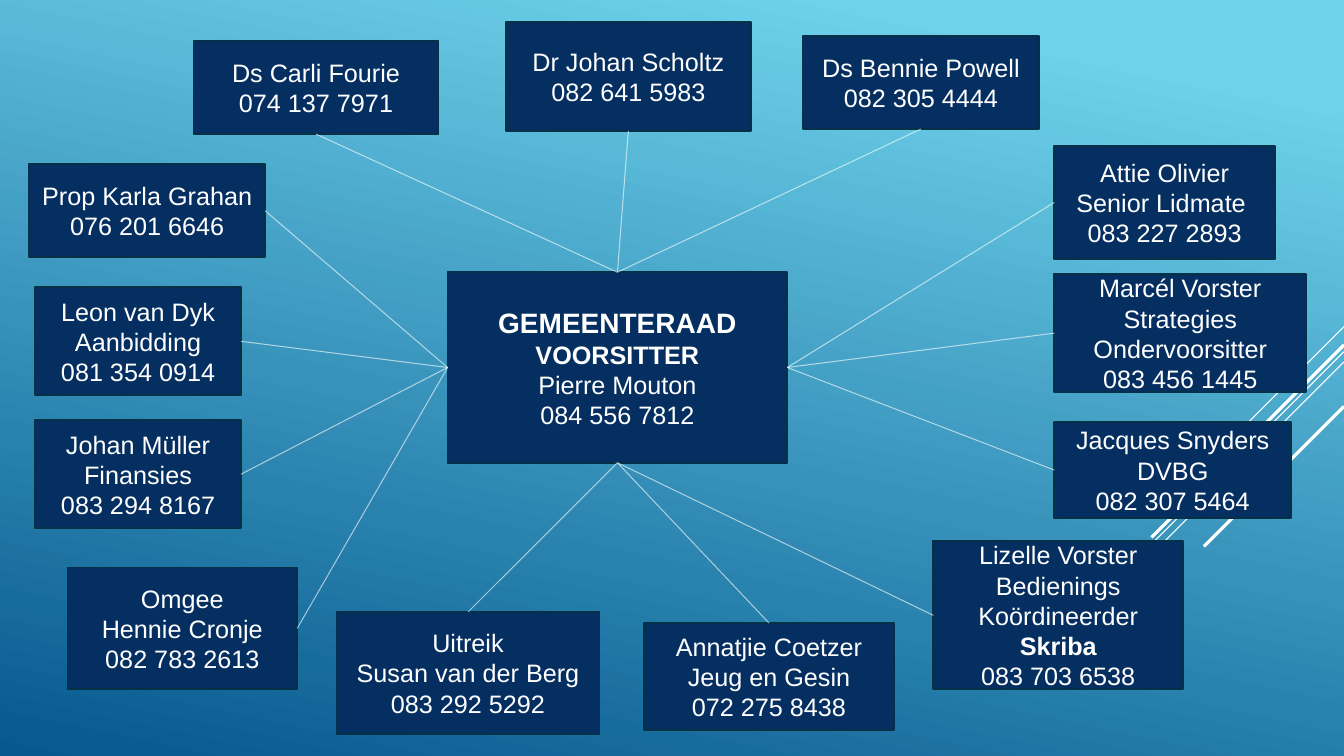
import pptx
import pptx.util
import pptx.dml.color
import pptx.enum.shapes
import pptx.enum.text
import pptx.oxml
import pptx.oxml.ns
import lxml.etree

Cm = pptx.util.Cm
Pt = pptx.util.Pt
RGB = pptx.dml.color.RGBColor.from_string
qn = pptx.oxml.ns.qn

COLOURS = {"sky": "6ED2EB", "sea": "06588E", "navy": "052F61",
           "edge": "043148", "white": "FFFFFF"}
TOP, LEFT, BOTTOM, RIGHT = range(4)
SLIDE_WIDTH = 33.87

deck = pptx.Presentation()
deck.slide_width = Cm(SLIDE_WIDTH)
deck.slide_height = Cm(19.05)
slide = deck.slides.add_slide(deck.slide_layouts[6])

backdrop = slide.background.fill
backdrop.gradient()
backdrop.gradient_angle = 258
for stop, position, colour in zip(backdrop.gradient_stops, (0.1, 1), ("sky", "sea")):
    stop.position = position
    stop.color.rgb = RGB(COLOURS[colour])


def add_line(x1, y1, x2, y2, weight):
    line = slide.shapes.add_connector(
        pptx.enum.shapes.MSO_CONNECTOR.STRAIGHT, Cm(x1), Cm(y1), Cm(x2), Cm(y2))
    line.line.color.rgb = RGB(COLOURS["white"])
    line.line.width = Pt(weight)
    lxml.etree.SubElement(line._element.spPr, qn("a:effectLst"))
    return line


def add_box(left, top, width, height, lines):
    box = slide.shapes.add_shape(
        pptx.enum.shapes.MSO_SHAPE.RECTANGLE, Cm(left), Cm(top), Cm(width), Cm(height))
    box.shadow.inherit = False
    box.fill.solid()
    box.fill.fore_color.rgb = RGB(COLOURS["navy"])
    box.line.color.rgb = RGB(COLOURS["edge"])
    box.line.width = Pt(1.25)
    frame = box.text_frame
    frame.word_wrap = True
    frame.vertical_anchor = pptx.enum.text.MSO_ANCHOR.MIDDLE
    frame.text = "\n".join(lines)
    for paragraph in frame.paragraphs:
        paragraph.alignment = pptx.enum.text.PP_ALIGN.CENTER
        for run in paragraph.runs:
            run.font.name = "Arial"
            run.font.size = Pt(20 if run.text == "GEMEENTERAAD" else 18)
            run.font.bold = run.text in ("GEMEENTERAAD", "VOORSITTER", "Skriba")
            run.font.color.rgb = RGB(COLOURS["white"])
    return box


for start, reach, weight in [(8.23, 2.54, 0.75), (8.86, 8.28, 0.75), (9.12, 5.26, 0.75),
                             (8.69, 4.85, 2.25), (10.24, 3.53, 2.25)]:
    add_line(SLIDE_WIDTH, start, SLIDE_WIDTH - reach, start + reach, weight)

council = add_box(11.28, 6.86, 8.56, 4.8,
                  ["GEMEENTERAAD", "VOORSITTER", "Pierre Mouton", "084 556 7812"])

members = [
    (4.88, 1.04, 6.17, 2.34, TOP, BOTTOM, ["Ds Carli Fourie", "074 137 7971"]),
    (12.75, 0.56, 6.17, 2.74, TOP, BOTTOM, ["Dr Johan Scholtz", "082 641 5983"]),
    (20.24, 0.91, 5.94, 2.34, TOP, BOTTOM, ["Ds Bennie Powell", "082 305 4444"]),
    (0.74, 4.14, 5.94, 2.34, LEFT, RIGHT, ["Prop Karla Grahan", "076 201 6646"]),
    (26.57, 3.68, 5.56, 2.84, RIGHT, LEFT,
     ["Attie Olivier", "Senior Lidmate ", "083 227 2893"]),
    (26.57, 6.91, 6.35, 2.97, RIGHT, LEFT,
     ["Marcél Vorster", "Strategies", "Ondervoorsitter", "083 456 1445"]),
    (0.89, 7.24, 5.18, 2.72, LEFT, RIGHT, ["Leon van Dyk", "Aanbidding", "081 354 0914"]),
    (0.89, 10.59, 5.18, 2.72, LEFT, RIGHT, ["Johan Müller", "Finansies", "083 294 8167"]),
    (26.57, 10.64, 5.97, 2.41, RIGHT, LEFT, ["Jacques Snyders", "DVBG", "082 307 5464"]),
    (16.23, 15.7, 6.3, 2.69, BOTTOM, TOP,
     ["Annatjie Coetzer", "Jeug en Gesin", "072 275 8438"]),
    (8.48, 15.42, 6.63, 3.07, BOTTOM, TOP,
     ["Uitreik", "Susan van der Berg", "083 292 5292"]),
    (23.52, 13.64, 6.3, 3.73, BOTTOM, LEFT,
     ["Lizelle Vorster", "Bedienings Koördineerder", "Skriba", "083 703 6538"]),
    (1.7, 14.3, 5.79, 3.07, LEFT, RIGHT, ["Omgee", "Hennie Cronje", "082 783 2613"]),
]

for left, top, width, height, council_side, member_side, lines in members:
    member = add_box(left, top, width, height, lines)
    spoke = add_line(0, 0, 1, 1, 0.75)
    spoke.begin_connect(council, council_side)
    spoke.end_connect(member, member_side)
    white = spoke._element.spPr.find(".//" + qn("a:srgbClr"))
    lxml.etree.SubElement(white, qn("a:alpha")).set("val", "60000")

deck.save("out.pptx")
